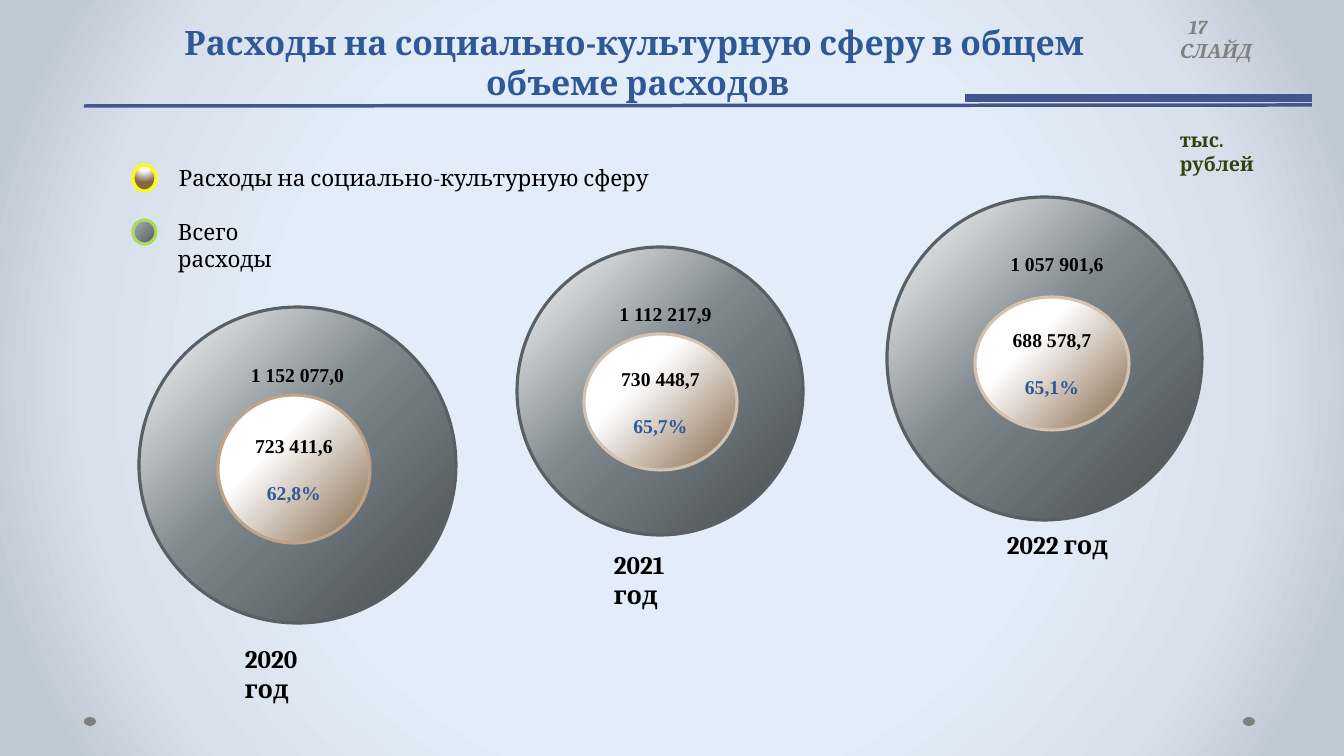
from dataclasses import dataclass

from lxml import etree
from pptx import Presentation
from pptx.dml.color import RGBColor
from pptx.enum import shapes, text
from pptx.oxml import ns
from pptx.util import Pt

SCALE = 12192000 / 1344


@dataclass(frozen=True)
class Theme:
    serif: str = "Cambria"
    numbers: str = "Times New Roman"
    black: str = "000000"
    blue: str = "2F5897"
    green: str = "314410"
    gray: str = "808080"
    rule: str = "42568D"
    total_line: str = "586064"
    title_size: int = 24
    year_size: int = 18
    legend_size: int = 16
    small_size: int = 14
    outline: float = 2.25
    background: tuple = ((50, "E3EDF9"), (76, "D8E0EB"), (92, "BFC9D4"))
    total: tuple = ((0, "FFFFFF"), (46, "7C868B"), (100, "464D50"))
    social: tuple = ((0, "FFFFFF"), (35, "FFFFFF"), (100, "846648"))
    total_mark: tuple = ((0, "4E5659"), (48, "798489"), (100, "ACB3B6"))


THEME = Theme()
CORNER = (0, 0, 100, 100)


@dataclass(frozen=True)
class YearSpending:
    """Values of one year and the px boxes (left, top, width, height) they take."""
    year: str
    total: str
    social: str
    share: str
    outer: tuple
    inner: tuple
    inner_line: str
    total_box: tuple
    year_box: tuple


YEARS = (
    YearSpending("2020 год", "1 152 077,0", "723 411,6", "62,8%",
                 (139, 307, 317, 316), (218, 395, 152, 148), "BEA388",
                 (198, 358, 199, 34), (235, 638, 119, 40)),
    YearSpending("2021 год", "1 112 217,9", "730 448,7", "65,7%",
                 (517, 247, 286, 288), (584, 334, 153, 136), "D4C2B0",
                 (593, 297, 145, 34), (604, 544, 119, 40)),
    YearSpending("2022 год", "1 057 901,6", "688 578,7", "65,1%",
                 (887, 197, 315, 323), (975, 297, 154, 133), "D4C2B0",
                 (975, 247, 164, 34), (997, 524, 125, 40)),
)


def px(length):
    return round(length * SCALE)


def color(value):
    return RGBColor.from_string(value)


def set_gradient(properties, stops, focus=None, angle=0):
    """Replace a solid fill by a circular gradient (focus) or a linear one (angle)."""
    gradient = etree.Element(ns.qn("a:gradFill"), rotWithShape="1")
    stop_list = etree.SubElement(gradient, ns.qn("a:gsLst"))
    for position, value in stops:
        stop = etree.SubElement(stop_list, ns.qn("a:gs"), pos=str(position * 1000))
        etree.SubElement(stop, ns.qn("a:srgbClr"), val=value)
    if focus:
        circle = etree.SubElement(gradient, ns.qn("a:path"), attrib={"path": "circle"})
        sides = {side: str(part * 1000) for side, part in zip("ltrb", focus)}
        etree.SubElement(circle, ns.qn("a:fillToRect"), attrib=sides)
    else:
        etree.SubElement(gradient, ns.qn("a:lin"), ang=str(angle * 60000), scaled="0")
    properties.replace(properties.find(ns.qn("a:solidFill")), gradient)


def set_background(slide):
    slide.background.fill.solid()
    properties = slide.element.find(".//" + ns.qn("p:bgPr"))
    set_gradient(properties, THEME.background, (50, 50, 50, 50))


def add_ellipse(slide, box, line=None, fill=THEME.gray):
    shape = slide.shapes.add_shape(shapes.MSO_SHAPE.OVAL, *map(px, box))
    shape.shadow.inherit = False
    shape.fill.solid()
    shape.fill.fore_color.rgb = color(fill)
    if line:
        shape.line.color.rgb = color(line)
        shape.line.width = Pt(THEME.outline)
    else:
        shape.line.fill.background()
    return shape


def add_gradient_ellipse(slide, box, line, stops, **direction):
    shape = add_ellipse(slide, box, line)
    set_gradient(shape.element.spPr, stops, **direction)
    return shape


def style_paragraph(paragraph, words, size, value=THEME.black, name=THEME.serif,
                    bold=True, italic=False, align=text.PP_ALIGN.LEFT):
    paragraph.text = words
    paragraph.alignment = align
    font = paragraph.font
    font.name, font.size = name, Pt(size)
    font.bold, font.italic = bold, italic
    font.color.rgb = color(value)


def add_text(slide, box, words, size, anchor=text.MSO_ANCHOR.TOP, **style):
    frame = slide.shapes.add_textbox(*map(px, box)).text_frame
    frame.word_wrap = True
    frame.vertical_anchor = anchor
    style_paragraph(frame.paragraphs[0], words, size, **style)
    return frame.paragraphs[0]


def add_rule(slide, start, end, width):
    rule = slide.shapes.add_connector(
        shapes.MSO_CONNECTOR.STRAIGHT, *map(px, start + end))
    rule.line.color.rgb = color(THEME.rule)
    rule.line.width = Pt(width)
    etree.SubElement(rule.element.spPr, ns.qn("a:effectLst"))


def add_year(slide, spending):
    add_gradient_ellipse(slide, spending.outer, THEME.total_line, THEME.total, focus=CORNER)
    inner = add_gradient_ellipse(
        slide, spending.inner, spending.inner_line, THEME.social, focus=CORNER)
    frame = inner.text_frame
    frame.vertical_anchor = text.MSO_ANCHOR.MIDDLE
    numbers = dict(size=THEME.small_size, name=THEME.numbers, align=text.PP_ALIGN.CENTER)
    style_paragraph(frame.paragraphs[0], spending.social, **numbers)
    frame.paragraphs[0].space_after = Pt(17)
    style_paragraph(frame.add_paragraph(), spending.share, value=THEME.blue, **numbers)
    add_text(slide, spending.total_box, spending.total, **numbers)
    add_text(slide, spending.year_box, spending.year, THEME.year_size)


def add_legend(slide):
    add_gradient_ellipse(slide, (133, 165, 23, 26), "FFFF00", THEME.social,
                         focus=(50, -80, 50, 180))
    add_text(slide, (169, 159, 535, 37), "Расходы на социально-культурную сферу",
             THEME.legend_size, bold=False)
    add_gradient_ellipse(slide, (133, 220, 23, 24), "ABD958", THEME.total_mark, angle=225)
    add_text(slide, (168, 213, 170, 37), "Всего расходы", THEME.legend_size, bold=False)


def add_heading(slide):
    add_text(slide, (118, 8, 1040, 99),
             "Расходы на социально-культурную сферу в общем \vобъеме расходов",
             THEME.title_size, anchor=text.MSO_ANCHOR.BOTTOM, value=THEME.blue,
             align=text.PP_ALIGN.CENTER)
    number = add_text(slide, (1170, 10, 105, 34), "17 СЛАЙД", THEME.small_size,
                      value=THEME.gray, italic=True)
    number._p.get_or_add_pPr().set("indent", str(px(9)))
    add_text(slide, (1170, 123, 138, 34), "тыс. рублей", THEME.small_size, value=THEME.green)
    add_rule(slide, (965, 98), (1312, 98), 6)
    add_rule(slide, (84, 106), (1312, 105), 2.5)


def main():
    presentation = Presentation()
    presentation.slide_width, presentation.slide_height = px(1344), px(756)
    slide = presentation.slides.add_slide(presentation.slide_layouts[6])
    set_background(slide)
    for left in (84, 1243):
        add_ellipse(slide, (left, 717, 12, 9))
    add_heading(slide)
    add_legend(slide)
    for spending in YEARS:
        add_year(slide, spending)
    presentation.save("out.pptx")


if __name__ == "__main__":
    main()
